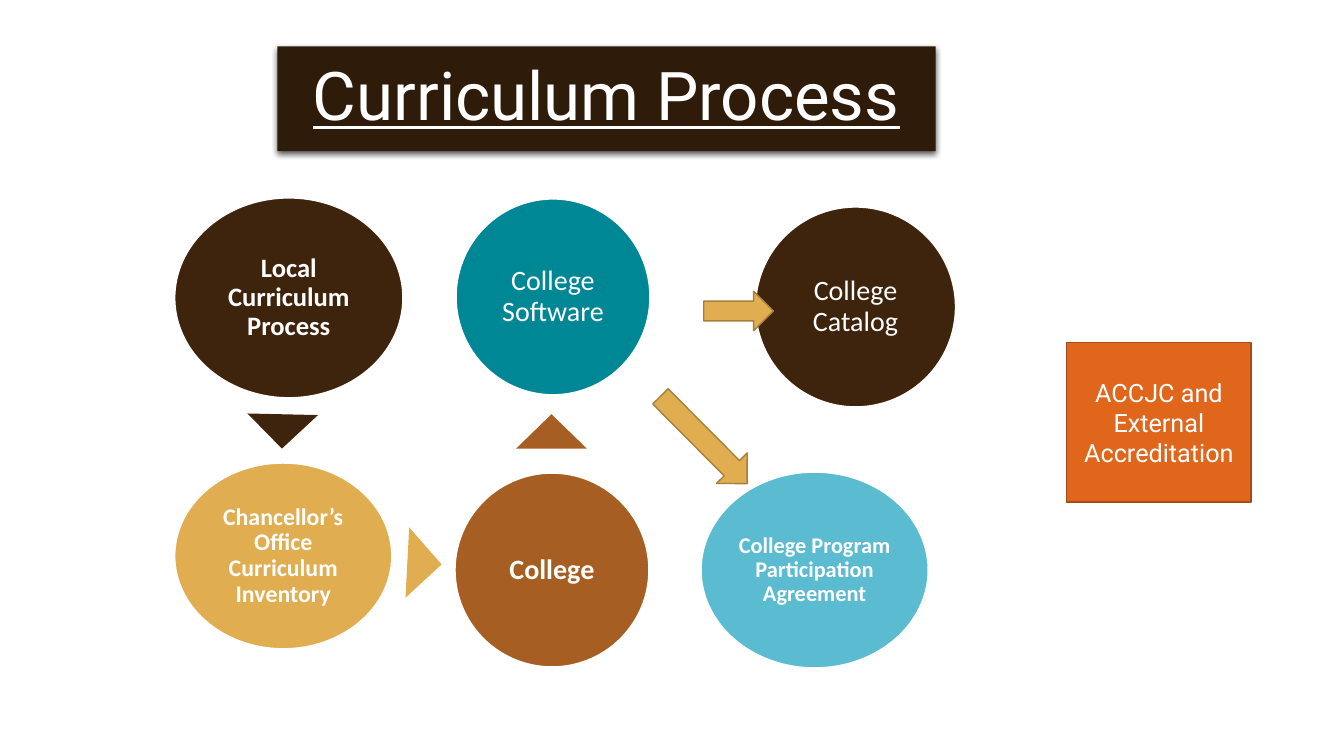
import pptx
import pptx.util
import pptx.dml.color
import pptx.enum.shapes
import pptx.enum.text
import pptx.oxml.ns
import lxml.etree

Inches = pptx.util.Inches
SHAPES = pptx.enum.shapes.MSO_SHAPE
COLORS = {
    "white": "FFFFFF", "title": "2F1B0A", "brown": "3F240D", "gold": "E0AD50",
    "sienna": "A65E23", "teal": "008796", "sky": "5BBBD0", "orange": "E0661C",
    "gold edge": "A6803B", "orange edge": "A64B15", "shadow": "000000",
}


def write_text(shape, text, size, font="Calibri", bold=False, underline=False,
               spacing=0.9, inset_x=0.03, inset_y=0.03):
    frame = shape.text_frame
    frame.word_wrap = True
    frame.auto_size = pptx.enum.text.MSO_AUTO_SIZE.NONE
    frame.vertical_anchor = pptx.enum.text.MSO_ANCHOR.MIDDLE
    frame.margin_left = frame.margin_right = Inches(inset_x)
    frame.margin_top = frame.margin_bottom = Inches(inset_y)
    para = frame.paragraphs[0]
    para.alignment = pptx.enum.text.PP_ALIGN.CENTER
    para.line_spacing = spacing
    span = para.add_run()
    span.text = text
    span.font.name = font
    span.font.size = pptx.util.Pt(size)
    span.font.bold = bold
    span.font.underline = underline
    span.font.color.rgb = pptx.dml.color.RGBColor.from_string(COLORS["white"])


def add_figure(kind, place, fill, edge=None, edge_width=1, rotation=0):
    shape = page.shapes.add_shape(kind, *[Inches(length) for length in place])
    shape.shadow.inherit = False
    shape.rotation = rotation
    shape.fill.solid()
    shape.fill.fore_color.rgb = pptx.dml.color.RGBColor.from_string(COLORS[fill])
    if edge:
        shape.line.color.rgb = pptx.dml.color.RGBColor.from_string(COLORS[edge])
        shape.line.width = pptx.util.Pt(edge_width)
    else:
        shape.line.fill.background()
    return shape


deck = pptx.Presentation()
deck.slide_width = Inches(13.33)
deck.slide_height = Inches(7.5)
page = deck.slides.add_slide(deck.slide_layouts[5])

title = page.shapes.title
title.left, title.top = Inches(2.75), Inches(0.46)
title.width, title.height = Inches(6.53), Inches(1.04)
title.fill.solid()
title.fill.fore_color.rgb = pptx.dml.color.RGBColor.from_string(COLORS["title"])
write_text(title, "Curriculum Process", 48, font="Roboto", underline=True,
           inset_x=0, inset_y=0)

qn = pptx.oxml.ns.qn
effects = lxml.etree.SubElement(title.element.spPr, qn("a:effectLst"))
shadow = lxml.etree.SubElement(
    effects, qn("a:outerShdw"), blurRad=str(pptx.util.Pt(4.5)),
    dist=str(pptx.util.Pt(1.5)), dir="5400000", algn="ctr", rotWithShape="0")
shadow_color = lxml.etree.SubElement(shadow, qn("a:srgbClr"), val=COLORS["shadow"])
lxml.etree.SubElement(shadow_color, qn("a:alpha"), val="63000")

stages = [
    ("Local Curriculum Process", (1.73, 1.96, 2.27, 1.99), "brown", 19, True),
    ("Chancellor’s Office Curriculum Inventory", (1.73, 4.59, 2.16, 1.85), "gold", 17, True),
    ("College", (4.51, 4.69, 1.93, 1.93), "sienna", 20, True),
    ("College Software", (4.52, 1.97, 1.93, 1.95), "teal", 20, False),
    ("College Program Participation Agreement", (6.95, 4.68, 2.26, 1.95), "sky", 16, True),
    ("College Catalog", (7.49, 2.05, 1.99, 1.99), "brown", 20, False),
]
for text, place, fill, size, bold in stages:
    circle = add_figure(SHAPES.OVAL, place, fill, edge="white", edge_width=1.5)
    write_text(circle, text, size, bold=bold)

pointers = [
    (2.45, 4.11, "brown", 181.3),
    (3.86, 5.42, "gold", 93),
    (5.12, 4.11, "sienna", 0),
]
for left, top, fill, rotation in pointers:
    add_figure(SHAPES.ISOSCELES_TRIANGLE, (left, top, 0.7, 0.34), fill, rotation=rotation)

for place, rotation in [((6.98, 2.89, 0.69, 0.39), 0), ((6.37, 4.15, 1.22, 0.43), 45.2)]:
    add_figure(SHAPES.RIGHT_ARROW, place, "gold", edge="gold edge", rotation=rotation)

accreditation = add_figure(SHAPES.RECTANGLE, (10.58, 3.4, 1.83, 1.58), "orange",
                           edge="orange edge")
write_text(accreditation, "ACCJC and External Accreditation", 18, font="Roboto",
           spacing=1.0, inset_x=0.1, inset_y=0.05)

deck.save("out.pptx")
